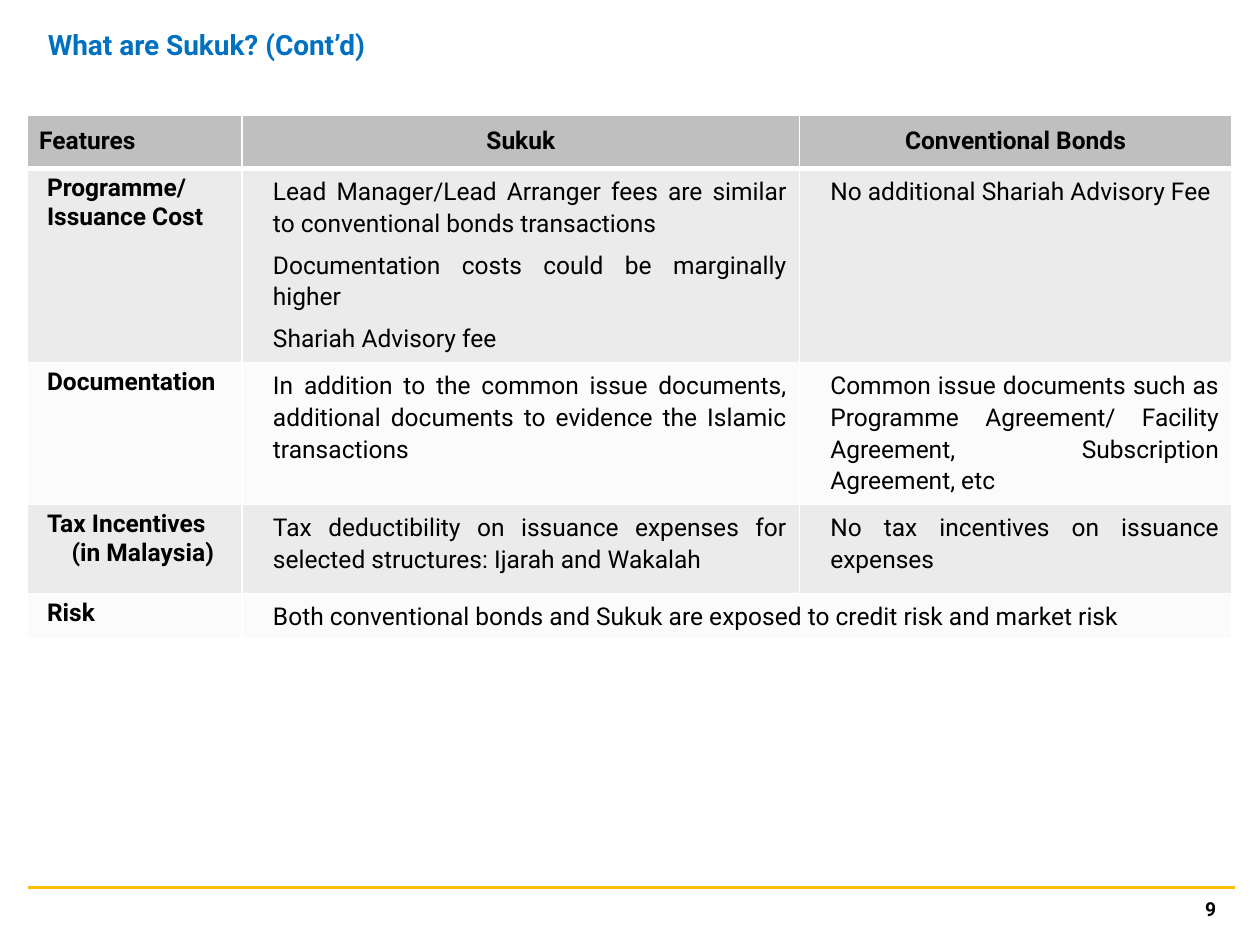
from lxml import etree
from pptx import Presentation
from pptx.dml.color import RGBColor
from pptx.enum.shapes import MSO_CONNECTOR
from pptx.enum.text import MSO_ANCHOR, MSO_AUTO_SIZE, PP_ALIGN
from pptx.oxml.ns import qn
from pptx.util import Pt

LEFT, CENTER, RIGHT, JUSTIFY = PP_ALIGN.LEFT, PP_ALIGN.CENTER, PP_ALIGN.RIGHT, PP_ALIGN.JUSTIFY
MIDDLE, TOP = MSO_ANCHOR.MIDDLE, MSO_ANCHOR.TOP
NO_FIT = MSO_AUTO_SIZE.NONE
STRAIGHT = MSO_CONNECTOR.STRAIGHT

FONT = "Roboto"
COLUMNS = [123, 318.5, 247]
HEIGHTS = [30.5, 109.5, 80.5, 51, 25]
FILLS = [("BFBFBF", 100), ("D9D9D9", 50), ("F2F2F2", 30), ("BFBFBF", 30), ("F2F2F2", 30)]
HEADERS = ["Features", "Sukuk", "Conventional Bonds"]
ROWS = [
    (["Programme/ Issuance Cost"],
     ["Lead Manager/Lead Arranger fees are similar to conventional bonds transactions",
      "Documentation costs could be marginally higher",
      "Shariah Advisory fee"],
     ["No additional Shariah Advisory Fee"]),
    (["Documentation"],
     ["In addition to the common issue documents, additional documents to evidence "
      "the Islamic transactions"],
     ["Common issue documents such as Programme Agreement/ Facility Agreement, "
      "Subscription Agreement, etc"]),
    (["Tax Incentives", "(in Malaysia)"],
     ["Tax deductibility on issuance expenses for selected structures: Ijarah and Wakalah"],
     ["No tax incentives on issuance expenses"]),
    (["Risk"],
     ["Both conventional bonds and Sukuk are exposed to credit risk and market risk"],
     None),
]


def rgb(value):
    """Turn a hex string into a colour."""
    return RGBColor.from_string(value)


def write(p, text, size=14, color="000000", bold=False, align=LEFT,
          indent=0, spacing=1.0, before=0):
    """Write formatted text into a paragraph."""
    p.alignment, p.line_spacing = align, spacing
    p.space_before, p.space_after = Pt(before), Pt(0)
    pPr = p._p.get_or_add_pPr()
    pPr.set("marL", str(Pt(indent)))
    pPr.set("indent", "0")
    r = p.add_run()
    r.text = text
    r.font.name, r.font.size, r.font.bold = FONT, Pt(size), bold
    r.font.color.rgb = rgb(color)


def add_borders(cell, top=1, bottom=1):
    """Give a cell white borders."""
    tcPr = cell._tc.get_or_add_tcPr()
    for i, (tag, width) in enumerate([("lnL", 1), ("lnR", 1), ("lnT", top), ("lnB", bottom)]):
        ln = etree.Element(qn("a:" + tag), w=str(Pt(width)))
        fill = etree.SubElement(ln, qn("a:solidFill"))
        etree.SubElement(fill, qn("a:srgbClr"), val="FFFFFF")
        tcPr.insert(i, ln)


def format_cell(cell, row, margins):
    """Set the fill, borders and margins of a cell in the given row."""
    color, opacity = FILLS[row]
    cell.fill.solid()
    cell.fill.fore_color.rgb = rgb(color)
    if opacity < 100:
        clr = cell._tc.tcPr.find(".//" + qn("a:srgbClr"))
        etree.SubElement(clr, qn("a:alpha"), val=str(opacity * 1000))
    add_borders(cell, top=3 if row == 1 else 1, bottom=3 if row == 0 else 1)
    cell.vertical_anchor = TOP
    cell.margin_left, cell.margin_top, cell.margin_right, cell.margin_bottom = map(Pt, margins)


def fill_cell(cell, texts, first=None, rest=None, **style):
    """Write one paragraph per text, with options for the first and the rest."""
    for i, text in enumerate(texts):
        p = cell.text_frame.add_paragraph() if i else cell.text_frame.paragraphs[0]
        write(p, text, **style, **((rest if i else first) or {}))


def add_title(s, text, x, y, w, h):
    """Place the slide title in its placeholder."""
    sp = s.shapes.title
    sp.left, sp.top, sp.width, sp.height = Pt(x), Pt(y), Pt(w), Pt(h)
    tf = sp.text_frame
    tf.margin_left = tf.margin_top = tf.margin_right = tf.margin_bottom = 0
    tf.vertical_anchor, tf.auto_size, tf.word_wrap = MIDDLE, NO_FIT, True
    write(tf.paragraphs[0], text, size=16, color="0070C0", bold=True)


def add_comparison(s, x, y):
    """Build the table comparing Sukuk with conventional bonds."""
    frame = s.shapes.add_table(len(HEIGHTS), len(COLUMNS), Pt(x), Pt(y),
                               Pt(sum(COLUMNS)), Pt(sum(HEIGHTS)))
    table = frame.table
    for column, width in zip(table.columns, COLUMNS):
        column.width = Pt(width)
    for row, height in zip(table.rows, HEIGHTS):
        row.height = Pt(height)
    for j, text in enumerate(HEADERS):
        cell = table.cell(0, j)
        format_cell(cell, 0, (7, 7, 7, 7))
        fill_cell(cell, [text], bold=True, align=CENTER if j else LEFT)
    for i, (label, *details) in enumerate(ROWS, 1):
        cell = table.cell(i, 0)
        format_cell(cell, i, (11.5, 3, 11.5, 3))
        fill_cell(cell, label, rest={"indent": 14}, bold=True)
        for j, texts in enumerate(details, 1):
            cell = table.cell(i, j)
            format_cell(cell, i, (3.6, 3.6, 7.2, 3.6))
            if texts is None:
                table.cell(i, j - 1).merge(cell)
            else:
                fill_cell(cell, texts, rest={"before": 5.5},
                          align=JUSTIFY, indent=14, spacing=1.1)


def add_footer(s, number, x, y, w):
    """Draw the footer rule with the page number below its right end."""
    line = s.shapes.add_connector(STRAIGHT, Pt(x), Pt(y), Pt(x + w), Pt(y))
    line.line.color.rgb, line.line.width = rgb("FFBC00"), Pt(1.5)
    etree.SubElement(line._element.spPr, qn("a:effectLst"))
    sp = s.shapes.add_textbox(Pt(x + w - 172), Pt(y - 2), Pt(168), Pt(29))
    tf = sp.text_frame
    tf.word_wrap, tf.vertical_anchor = True, MIDDLE
    write(tf.paragraphs[0], number, size=11, bold=True, align=RIGHT)


def main():
    """Build and save the slide."""
    prs = Presentation()
    prs.slide_width, prs.slide_height = Pt(720), Pt(540)
    s = prs.slides.add_slide(prs.slide_layouts[5])
    add_footer(s, "9", 16, 507, 690)
    add_comparison(s, 15.4, 65.6)
    add_title(s, "What are Sukuk? (Cont’d)", 27.4, 0, 542, 50.5)
    prs.save("out.pptx")


if __name__ == "__main__":
    main()
